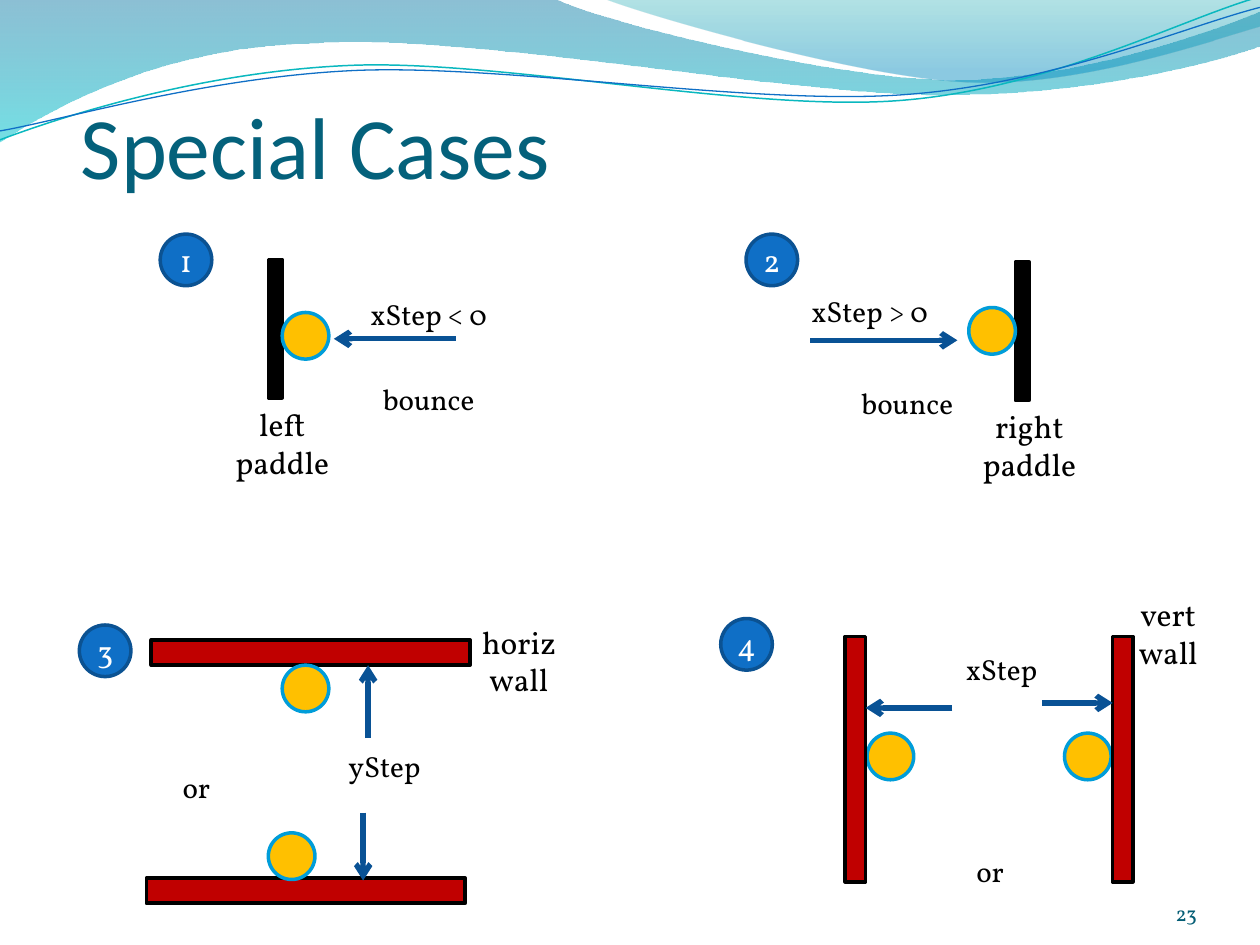
import pptx
import pptx.dml.color
import pptx.enum.shapes
import pptx.enum.text
import pptx.oxml
import pptx.oxml.ns
import pptx.util
from pptx.util import Cm

SHAPE = pptx.enum.shapes.MSO_SHAPE
ALIGN = pptx.enum.text.PP_ALIGN
ANCHOR = pptx.enum.text.MSO_ANCHOR

THEME = {
    "title": {"name": "Calibri", "size": 50, "color": "04617B"},
    "name": {"name": "Vollkorn", "size": 18, "color": "000000"},
    "step": {"name": "Vollkorn", "size": 16.6, "color": "000000"},
    "badge_text": {"name": "Vollkorn", "size": 18, "color": "FFFFFF"},
    "number": {"name": "Vollkorn", "size": 12, "color": "045D75"},
    "arrow": ("095295", 3),
    # kind: preset, fill, line colour, width and height in cm
    "paddle": (SHAPE.RECTANGLE, "000000", "000000", 0.28, 2.79),
    "floor": (SHAPE.RECTANGLE, "C00000", "000000", 6.43, 0.51),
    "wall": (SHAPE.RECTANGLE, "C00000", "000000", 0.41, 4.95),
    "ball": (SHAPE.OVAL, "FFC000", "009DD9", 0.94, 0.94),
    "badge": (SHAPE.OVAL, "0F6FC6", "0B5292", 1.04, 1.04),
}

# Content: all positions in cm
TITLE = "Special Cases"
PAGE_NUMBER = "23"
CASES = [
    {
        "badge": ("1", 3.23, 4.72),
        "parts": [("paddle", 5.41, 5.23), ("ball", 5.69, 6.3)],
        "arrows": [(9.19, 6.83, 6.73, 6.83)],
        "labels": [("name", "left\npaddle", 4.42, 8.03),
                   ("step", "xStep < 0", 7.37, 5.84),
                   ("step", "bounce", 7.37, 7.57)],
    },
    {
        "badge": ("2", 15.04, 4.72),
        "parts": [("paddle", 20.47, 5.28), ("ball", 19.53, 6.2)],
        "arrows": [(16.33, 6.86, 19.3, 6.86)],
        "labels": [("name", "right\npaddle", 19.48, 8.08),
                   ("step", "xStep > 0", 16.26, 5.79),
                   ("step", "bounce", 17.02, 7.65)],
    },
    {
        "badge": ("3", 1.6, 12.6),
        "parts": [("floor", 3.05, 12.9), ("ball", 5.69, 13.41),
                  ("floor", 2.95, 17.7), ("ball", 5.41, 16.79)],
        "arrows": [(7.42, 14.88, 7.42, 13.41), (7.32, 16.38, 7.32, 17.75)],
        "labels": [("name", "horiz\nwall", 9.19, 12.42),
                   ("step", "yStep", 6.48, 14.96),
                   ("step", "or", 2.69, 15.39)],
    },
    {
        "badge": ("4", 14.53, 12.47),
        "parts": [("ball", 17.48, 14.78), ("ball", 21.46, 14.78),
                  ("wall", 17.04, 12.83), ("wall", 22.43, 12.83)],
        "arrows": [(21.01, 14.17, 22.43, 14.17), (19.2, 14.27, 17.45, 14.27)],
        "labels": [("name", "vert\nwall", 22.28, 11.86),
                   ("step", "xStep", 18.92, 13),
                   ("step", "or", 18.69, 17.07)],
    },
]

# Wave outlines: two numbers for a straight step, six for a Bezier curve
# Gradient stops: position, colour, opacity in percent
WAVES = [
    {"path": [(0, 0), (11.18, -0.03), (12.09, 0.43, 16.87, 1.6, 19.25, 1.6),
              (21.67, 1.6, 24.33, 0.66, 25.4, 0.23), (25.43, 0.91),
              (24.97, 1.12, 22.1, 1.93, 18.95, 1.91),
              (15.8, 1.91, 9.7, 0.71, 6.53, 0.86),
              (3.28, 0.91, 1.17, 2.11, -0.03, 2.87)],
     "gradient": [(0, "0074A1", 45), (1, "00C6CF", 55)]},
    {"path": [(12.17, -0.03), (12.93, 0.28, 17.32, 1.57, 19.53, 1.65),
              (21.74, 1.75, 24.41, 0.81, 25.4, 0.53), (25.4, 0)],
     "gradient": [(0, "00A1A9", 30), (0.8, "008BBF", 45)]},
    {"path": [(0, 2.82), (1.22, 2.36, 4.01, 1.45, 7.04, 1.32),
              (10.03, 1.19, 15.06, 2.26, 18.11, 2.03),
              (21.16, 1.8, 23.83, 0.38, 25.35, -0.05)],
     "line": ("0AB8BF", 0.85)},
    {"path": [(0, 2.64), (1.19, 2.44, 4.17, 1.55, 7.19, 1.42),
              (10.24, 1.3, 15.16, 2.13, 18.21, 1.91),
              (21.23, 1.7, 23.9, 0.53, 25.4, 0.15)],
     "line": ("0F6FC6", 0.75)},
]


def rgb(value):
    return pptx.dml.color.RGBColor.from_string(value)


def set_line(shape, color, width):
    shape.line.color.rgb = rgb(color)
    shape.line.width = pptx.util.Pt(width)


def write(shape, text, style, align=ALIGN.CENTER, anchor=ANCHOR.TOP, **frame_format):
    frame = shape.text_frame
    for key, value in {"vertical_anchor": anchor, **frame_format}.items():
        setattr(frame, key, value)
    frame.text = text
    look = THEME[style]
    font_format = {"name": look["name"], "size": pptx.util.Pt(look["size"])}
    for paragraph in frame.paragraphs:
        paragraph.alignment = align
        font = paragraph.runs[0].font
        for key, value in font_format.items():
            setattr(font, key, value)
        font.color.rgb = rgb(look["color"])


def margins(left=0, top=0, right=0, bottom=0):
    return {"margin_left": Cm(left), "margin_top": Cm(top),
            "margin_right": Cm(right), "margin_bottom": Cm(bottom)}


def add_part(slide, kind, left, top):
    preset, fill, line, width, height = THEME[kind]
    shape = slide.shapes.add_shape(preset, Cm(left), Cm(top), Cm(width), Cm(height))
    shape.shadow.inherit = False
    shape.fill.solid()
    shape.fill.fore_color.rgb = rgb(fill)
    set_line(shape, line, 2)
    return shape


def add_arrow(slide, *ends):
    connector = slide.shapes.add_connector(
        pptx.enum.shapes.MSO_CONNECTOR.STRAIGHT, *map(Cm, ends))
    set_line(connector, *THEME["arrow"])
    namespace = pptx.oxml.ns.nsdecls("a")
    connector.line._get_or_add_ln().append(
        pptx.oxml.parse_xml(f'<a:tailEnd {namespace} type="arrow"/>'))
    connector._element.spPr.append(pptx.oxml.parse_xml(f"<a:effectLst {namespace}/>"))


def add_outline(slide, path, close):
    points = [(Cm(step[i]), Cm(step[i + 1])) for step in path for i in range(0, len(step), 2)]
    builder = slide.shapes.build_freeform(*points[0])
    builder.add_line_segments(points[1:], close=close)
    shape = builder.convert_to_shape()
    # Join each three segments of a curve into one Bezier segment
    qn = pptx.oxml.ns.qn
    segments = iter(shape._element.spPr.findall(".//" + qn("a:lnTo")))
    for step in path[1:]:
        segment = next(segments)
        if len(step) == 6:
            curve = segment.makeelement(qn("a:cubicBezTo"), {})
            segment.addprevious(curve)
            for part in (segment, next(segments), next(segments)):
                curve.append(part[0])
                part.getparent().remove(part)
    return shape


def add_wave(slide, wave):
    shape = add_outline(slide, wave["path"], close="gradient" in wave)
    shape.shadow.inherit = False
    if "line" in wave:
        shape.fill.background()
        set_line(shape, *wave["line"])
        return
    shape.line.fill.background()
    shape.fill.gradient()
    shape.fill.gradient_angle = 270
    for stop, (position, color, _) in zip(shape.fill.gradient_stops, wave["gradient"]):
        stop.position = position
        stop.color.rgb = rgb(color)
    colors = shape._element.spPr.findall(".//" + pptx.oxml.ns.qn("a:srgbClr"))
    for element, (_, _, opacity) in zip(colors, wave["gradient"]):
        alpha = element.makeelement(pptx.oxml.ns.qn("a:alpha"), {"val": str(opacity * 1000)})
        element.append(alpha)


def main():
    presentation = pptx.Presentation()
    presentation.slide_width, presentation.slide_height = Cm(25.4), Cm(19.05)
    slide = presentation.slides.add_slide(presentation.slide_layouts[5])

    # Waves across the top
    for wave in WAVES:
        add_wave(slide, wave)

    # Title and page number
    title = slide.shapes.title
    for key, value in {"left": 1.63, "top": 0.3, "width": 21.89, "height": 3.68}.items():
        setattr(title, key, Cm(value))
    write(title, TITLE, "title", ALIGN.LEFT, ANCHOR.BOTTOM, **margins(top=0.13))
    number = slide.shapes.add_textbox(Cm(22.02), Cm(17.65), Cm(2.11), Cm(1.02))
    write(number, PAGE_NUMBER, "number", ALIGN.RIGHT, ANCHOR.BOTTOM,
          word_wrap=True, **margins())

    # The four cases
    for case in CASES:
        for part in case["parts"]:
            add_part(slide, *part)
        for ends in case["arrows"]:
            add_arrow(slide, *ends)
        for style, text, left, top in case["labels"]:
            height = 0.91 * len(text.splitlines())
            label = slide.shapes.add_textbox(Cm(left), Cm(top), Cm(2.54), Cm(height))
            write(label, text, style, word_wrap=False, **margins(top=0.13, bottom=0.13))
        digit, left, top = case["badge"]
        badge = add_part(slide, "badge", left, top)
        write(badge, digit, "badge_text", anchor=ANCHOR.MIDDLE, **margins())

    presentation.save("out.pptx")


if __name__ == "__main__":
    main()
